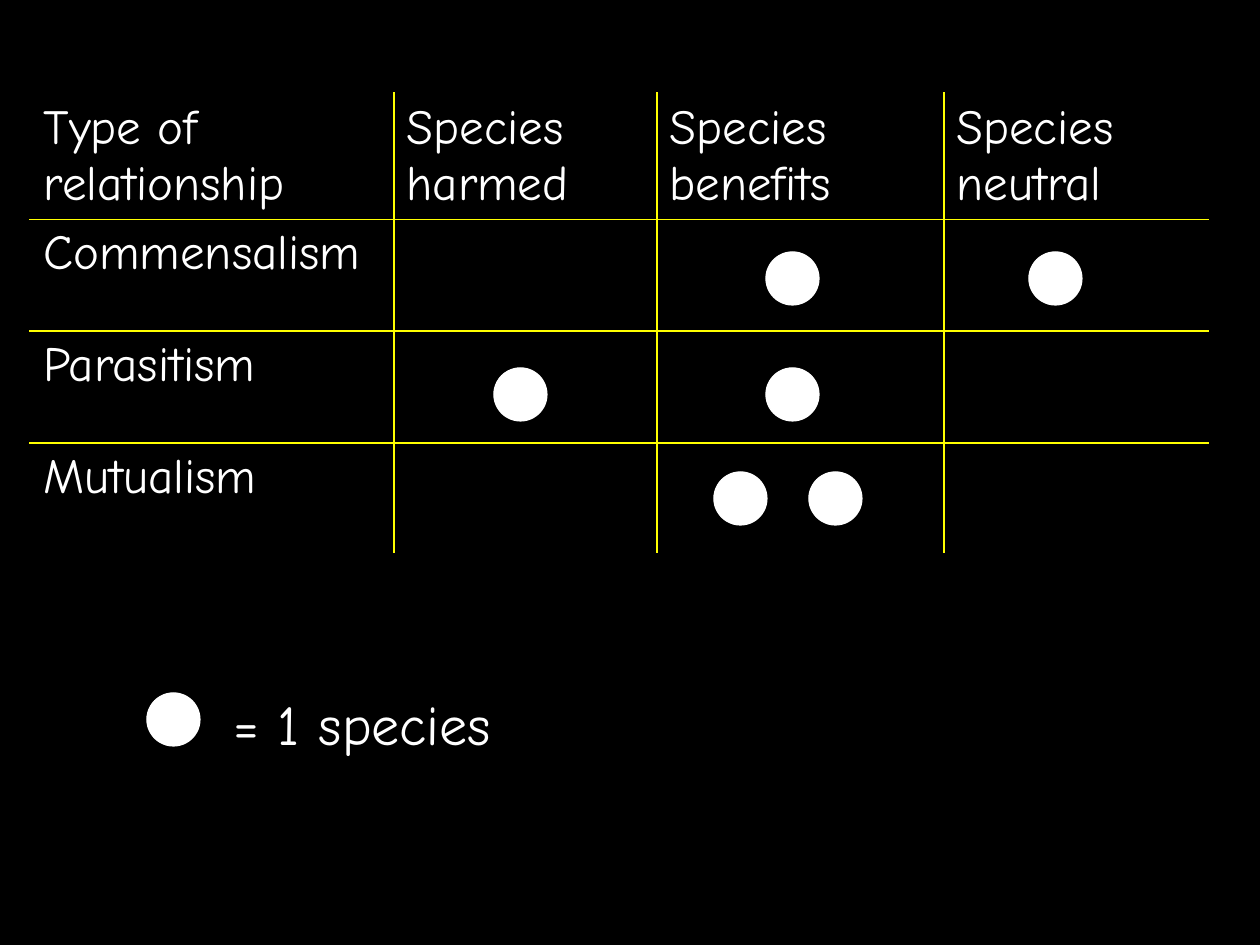
"""Build a slide that compares three kinds of species relationship."""
import pptx
import pptx.util
import pptx.dml.color
import pptx.enum.shapes
import pptx.oxml
import pptx.oxml.ns
from lxml import etree

SCALE = 914400 / 126
A = pptx.oxml.ns.nsdecls("a")
WHITE, BLACK, YELLOW = "FFFFFF", "000000", "FFFF00"


def rgb(value):
    return pptx.dml.color.RGBColor.from_string(value)


def set_text(tf, text, size, before):
    tf.text = text
    p = tf.paragraphs[0]
    p._p.get_or_add_pPr().append(pptx.oxml.parse_xml(
        f'<a:spcBef {A}><a:spcPct val="{before * 1000}"/></a:spcBef>'))
    for r in p.runs:
        r.font.size = pptx.util.Pt(size)
        r.font.name = "Comic Neue"
        r.font.color.rgb = rgb(WHITE)


prs = pptx.Presentation()
prs.slide_width, prs.slide_height = round(1260 * SCALE), round(945 * SCALE)
s = prs.slides.add_slide(prs.slide_layouts[6])
s.background.fill.solid()
s.background.fill.fore_color.rgb = rgb(BLACK)

rows = [
    ["Type of relationship", "Species harmed", "Species benefits", "Species neutral"],
    ["Commensalism", "", "", ""],
    ["Parasitism", "", "", ""],
    ["Mutualism", "", "", ""],
]
widths = [363, 263, 287, 263]
row_height = 112
box = (31, 94, sum(widths), row_height * len(rows))
table = s.shapes.add_table(len(rows), len(widths), *[round(v * SCALE) for v in box]).table
table.first_row = table.horz_banding = False
for column, width in zip(table.columns, widths):
    column.width = round(width * SCALE)

for i, row in enumerate(rows):
    table.rows[i].height = round(row_height * SCALE)
    for j, text in enumerate(row):
        cell = table.cell(i, j)
        if text:
            set_text(cell.text_frame, text, 28, 20)
        outer = {"L": j == 0, "R": j == len(row) - 1, "T": i == 0, "B": i == len(rows) - 1}
        tcPr = cell._tc.get_or_add_tcPr()
        for side, is_outer in outer.items():
            color, width = (BLACK, 2.25) if is_outer else (YELLOW, 1)
            ln = etree.SubElement(tcPr, pptx.oxml.ns.qn(f"a:ln{side}"), w=str(pptx.util.Pt(width)))
            ln.append(pptx.oxml.parse_xml(
                f'<a:solidFill {A}><a:srgbClr val="{color}"/></a:solidFill>'))
        cell.fill.background()

dots = [(766, 368), (494, 368), (809, 472), (714, 472), (766, 252), (1029, 252), (147, 693)]
for x, y in dots:
    sp = s.shapes.add_shape(pptx.enum.shapes.MSO_SHAPE.OVAL,
                            *[round(v * SCALE) for v in (x, y, 53, 53)])
    sp.shadow.inherit = False
    sp.fill.solid()
    sp.fill.fore_color.rgb = rgb(WHITE)
    sp.line.color.rgb = rgb(WHITE)
    sp.line.width = pptx.util.Pt(0.75)

key = s.shapes.add_textbox(*[round(v * SCALE) for v in (221, 683, 441, 79)])
key.text_frame.word_wrap = True
set_text(key.text_frame, "= 1 species", 32, 50)

prs.save("out.pptx")
